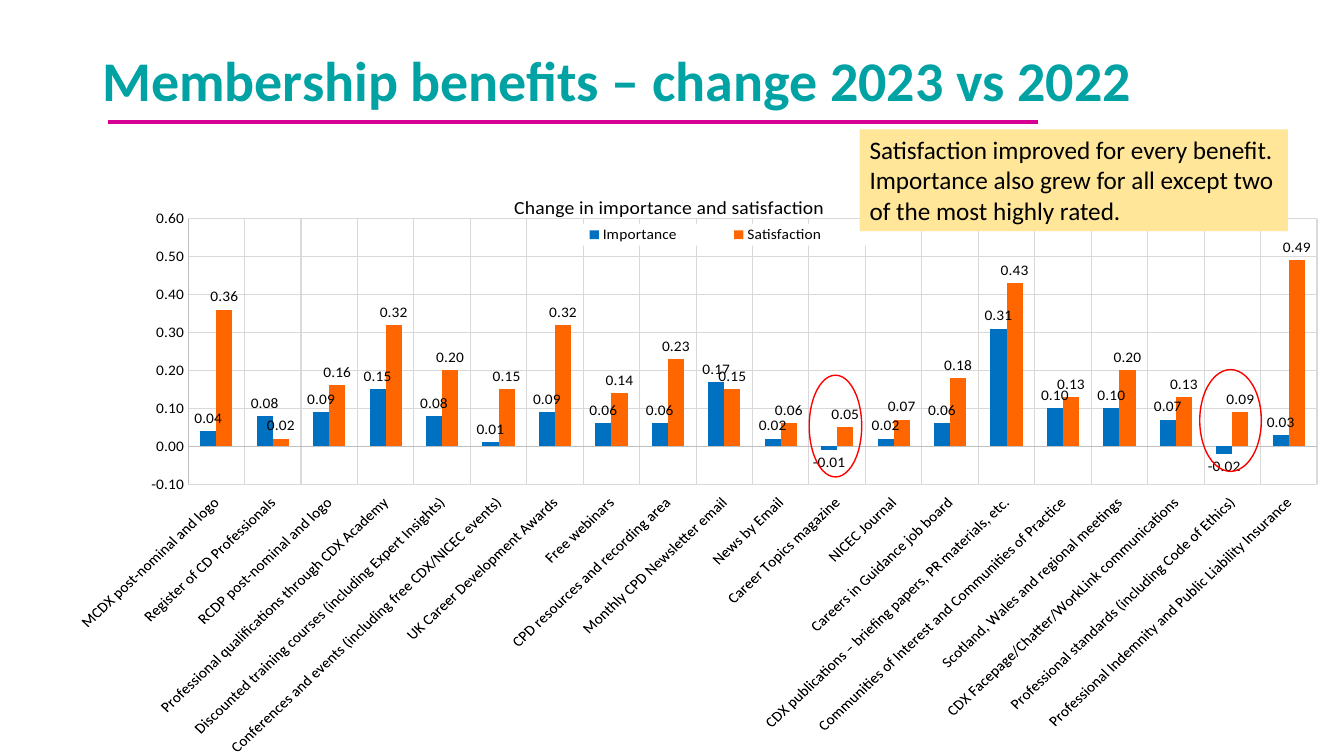
"""Build the membership benefits slide: change in importance and satisfaction, 2023 vs 2022."""
from lxml import etree
from pptx import Presentation
from pptx.chart.data import CategoryChartData
from pptx.dml.color import RGBColor
from pptx.enum.chart import XL_CHART_TYPE, XL_LABEL_POSITION, XL_LEGEND_POSITION, XL_TICK_LABEL_POSITION, XL_TICK_MARK
from pptx.enum.shapes import MSO_CONNECTOR, MSO_SHAPE
from pptx.enum.text import MSO_ANCHOR, PP_ALIGN
from pptx.oxml import parse_xml
from pptx.oxml.ns import qn
from pptx.util import Pt

COLUMN = XL_CHART_TYPE.COLUMN_CLUSTERED
OUTSIDE_END = XL_LABEL_POSITION.OUTSIDE_END
LEGEND_BOTTOM = XL_LEGEND_POSITION.BOTTOM
LABELS_LOW = XL_TICK_LABEL_POSITION.LOW
NO_TICK = XL_TICK_MARK.NONE
STRAIGHT = MSO_CONNECTOR.STRAIGHT
RECT, OVAL = MSO_SHAPE.RECTANGLE, MSO_SHAPE.OVAL
MIDDLE, TOP = MSO_ANCHOR.MIDDLE, MSO_ANCHOR.TOP
LEFT = PP_ALIGN.LEFT

FONT = "Calibri"
COLORS = {
    "teal": "00A2A3", "magenta": "D60093", "note": "FFE699", "ring": "FF0000",
    "Importance": "0070C0", "Satisfaction": "FF6600",
    "text": "000000", "axis": "BFBFBF", "grid": "D9D9D9",
}
BENEFITS = [
    ("MCDX post-nominal and logo", 0.04, 0.36),
    ("Register of CD Professionals", 0.08, 0.02),
    ("RCDP post-nominal and logo", 0.09, 0.16),
    ("Professional qualifications through CDX Academy", 0.15, 0.32),
    ("Discounted training courses (including Expert Insights)", 0.08, 0.20),
    ("Conferences and events (including free CDX/NICEC events)", 0.01, 0.15),
    ("UK Career Development Awards", 0.09, 0.32),
    ("Free webinars", 0.06, 0.14),
    ("CPD resources and recording area", 0.06, 0.23),
    ("Monthly CPD Newsletter email", 0.17, 0.15),
    ("News by Email", 0.02, 0.06),
    ("Career Topics magazine", -0.01, 0.05),
    ("NICEC Journal", 0.02, 0.07),
    ("Careers in Guidance job board", 0.06, 0.18),
    ("CDX publications – briefing papers, PR materials, etc.", 0.31, 0.43),
    ("Communities of Interest and Communities of Practice", 0.10, 0.13),
    ("Scotland, Wales and regional meetings", 0.10, 0.20),
    ("CDX Facepage/Chatter/WorkLink communications", 0.07, 0.13),
    ("Professional standards (including Code of Ethics)", -0.02, 0.09),
    ("Professional Indemnity and Public Liability Insurance", 0.03, 0.49),
]


def set_font(font, size, color="text", bold=False):
    font.name, font.size, font.bold = FONT, Pt(size), bold
    font.color.rgb = RGBColor.from_string(COLORS[color])


def set_layout(parent, index, inner=False, **fractions):
    for old in parent.findall(qn("c:layout")):
        parent.remove(old)
    layout = etree.Element(qn("c:layout"))
    manual = etree.SubElement(layout, qn("c:manualLayout"))
    if inner:
        etree.SubElement(manual, qn("c:layoutTarget"), val="inner")
    for mode in ("xMode", "yMode"):
        etree.SubElement(manual, qn("c:" + mode), val="edge")
    for key, value in fractions.items():
        etree.SubElement(manual, qn("c:" + key), val=str(value))
    parent.insert(index, layout)


prs = Presentation()
prs.slide_width, prs.slide_height = Pt(960), Pt(540)
s = prs.slides.add_slide(prs.slide_layouts[6])

tf = s.shapes.add_textbox(Pt(66), Pt(16), Pt(828), Pt(87)).text_frame
tf.word_wrap = True
tf.vertical_anchor = MIDDLE
p = tf.paragraphs[0]
p.text = "Membership benefits – change 2023 vs 2022"
p.line_spacing = 0.9
set_font(p.font, 40, "teal", True)

rule = s.shapes.add_connector(STRAIGHT, Pt(77), Pt(87), Pt(741.6), Pt(87))
rule.line.color.rgb = RGBColor.from_string(COLORS["magenta"])
rule.line.width = Pt(3)
etree.SubElement(rule.element.spPr, qn("a:effectLst"))

data = CategoryChartData(number_format="0.00")
names, importance, satisfaction = zip(*BENEFITS)
data.categories = names
data.add_series("Importance", importance)
data.add_series("Satisfaction", satisfaction)
chart = s.shapes.add_chart(COLUMN, Pt(0), Pt(129), Pt(960), Pt(411), data).chart
set_font(chart.font, 10)

chart.has_title = True
p = chart.chart_title.text_frame.paragraphs[0]
p.text = "Change in importance and satisfaction"
set_font(p.font, 14)
set_layout(chart.chart_title._element, 1, x=0.38, y=0.02)

chart.has_legend = True
legend = chart.legend
legend.position = LEGEND_BOTTOM
legend.include_in_layout = False
set_font(legend.font, 11)
set_layout(legend._element, 1, x=0.4, y=0.08, w=0.25, h=0.04)
legend._element.find(qn("c:overlay")).addnext(parse_xml(
    '<c:spPr xmlns:c="http://schemas.openxmlformats.org/drawingml/2006/chart" '
    'xmlns:a="http://schemas.openxmlformats.org/drawingml/2006/main">'
    '<a:solidFill><a:srgbClr val="FFFFFF"/></a:solidFill></c:spPr>'))

plot = chart.plots[0]
plot.gap_width, plot.overlap = 150, 0
plot.vary_by_categories = False
set_layout(plot._element.getparent(), 0, inner=True, x=0.14, y=0.07, w=0.84, h=0.49)
for series in plot.series:
    series.format.fill.solid()
    series.format.fill.fore_color.rgb = RGBColor.from_string(COLORS[series.name])
    series.invert_if_negative = False
    labels = series.data_labels
    labels.show_value = True
    labels.number_format, labels.number_format_is_linked = "0.00", False
    labels.position = OUTSIDE_END
    set_font(labels.font, 11)

for axis in (chart.category_axis, chart.value_axis):
    axis.major_tick_mark = axis.minor_tick_mark = NO_TICK
    axis.has_major_gridlines = True
    for line, color in ((axis.format.line, "axis"), (axis.major_gridlines.format.line, "grid")):
        line.color.rgb = RGBColor.from_string(COLORS[color])
        line.width = Pt(0.75)
    set_font(axis.tick_labels.font, 11)
chart.category_axis.tick_label_position = LABELS_LOW
chart.category_axis._element.find(qn("c:txPr")).find(qn("a:bodyPr")).set("rot", "-2700000")
value_axis = chart.value_axis
value_axis.minimum_scale, value_axis.maximum_scale, value_axis.major_unit = -0.1, 0.6, 0.1
value_axis.tick_labels.number_format = "0.00"
value_axis.tick_labels.number_format_is_linked = False

note = s.shapes.add_shape(RECT, Pt(614), Pt(92.5), Pt(306), Pt(72.7))
note.shadow.inherit = False
note.fill.solid()
note.fill.fore_color.rgb = RGBColor.from_string(COLORS["note"])
note.line.fill.background()
tf = note.text_frame
tf.word_wrap = True
tf.vertical_anchor = TOP
p = tf.paragraphs[0]
p.text = "Satisfaction improved for every benefit. Importance also grew for all except two of the most highly rated."
p.alignment = LEFT
set_font(p.font, 18)

for x, y, w in ((578, 268, 37.5), (857, 264, 44)):
    ring = s.shapes.add_shape(OVAL, Pt(x), Pt(y), Pt(w), Pt(72.7))
    ring.shadow.inherit = False
    ring.fill.background()
    ring.line.color.rgb = RGBColor.from_string(COLORS["ring"])
    ring.line.width = Pt(1)

prs.save("out.pptx")
